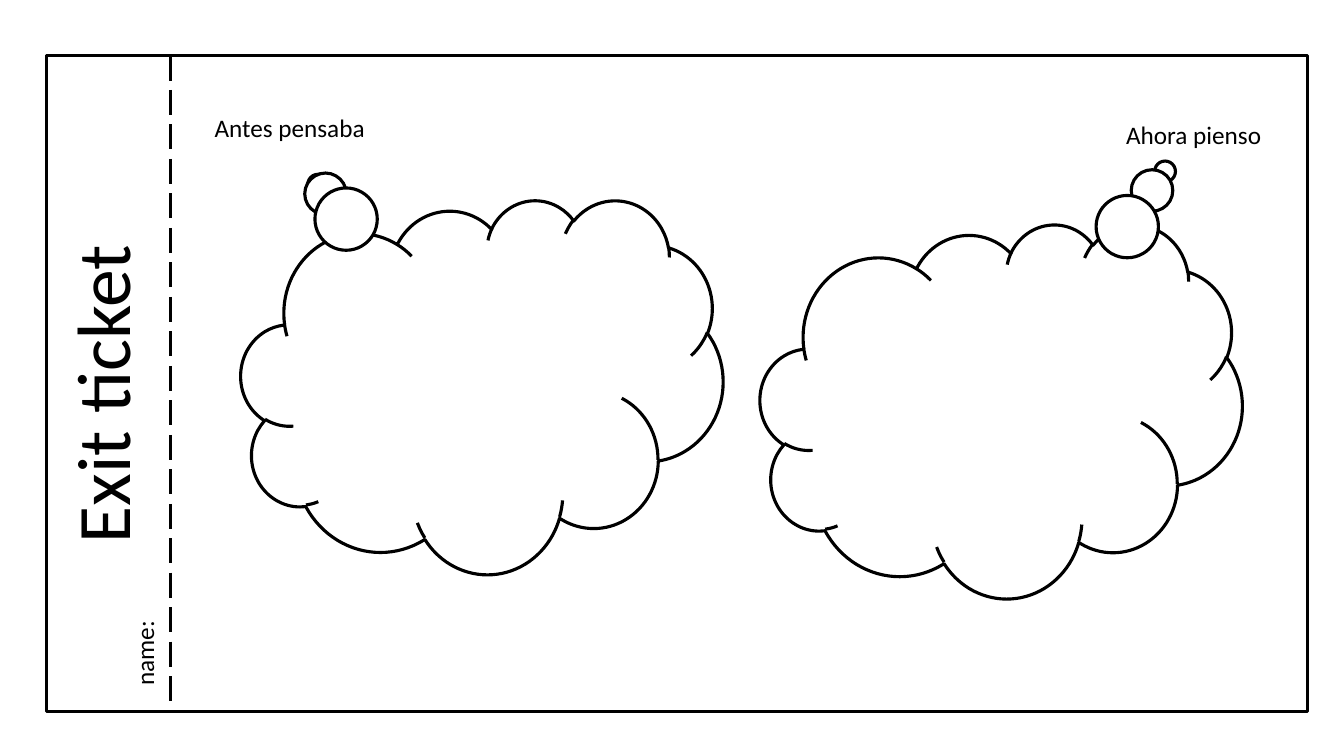
from pptx import Presentation
from pptx.dml.color import RGBColor
from pptx.enum.dml import MSO_LINE
from pptx.enum.shapes import MSO_CONNECTOR, MSO_SHAPE
from pptx.enum.text import MSO_AUTO_SIZE
from pptx.oxml.ns import qn
from pptx.util import Inches, Pt
from lxml.etree import SubElement

BLACK, WHITE = "000000", "FFFFFF"


def rgb(value):
    return RGBColor.from_string(value)


def add_label(shapes, text, box, size, rotation=0):
    sp = shapes.add_textbox(*map(Inches, box))
    sp.rotation = rotation
    tf = sp.text_frame
    tf.word_wrap = True
    tf.auto_size = MSO_AUTO_SIZE.SHAPE_TO_FIT_TEXT
    r = tf.paragraphs[0].add_run()
    r.text = text
    for name, value in {"name": "Calibri", "size": Pt(size)}.items():
        setattr(r.font, name, value)
    r.font.color.rgb = rgb(BLACK)


prs = Presentation()
prs.slide_width, prs.slide_height = Inches(13.33), Inches(7.5)
slide = prs.slides.add_slide(prs.slide_layouts[6])

ticket = slide.shapes.add_group_shape().shapes
left, top, width, height = 0.46, 0.55, 12.51, 6.51
stub = ticket.add_connector(MSO_CONNECTOR.STRAIGHT, Inches(1.69), Inches(top),
                            Inches(1.69), Inches(top + height))
stub.line.dash_style = MSO_LINE.LONG_DASH
SubElement(stub._element.spPr, qn("a:effectLst"))
frame = ticket.add_shape(MSO_SHAPE.RECTANGLE, Inches(left), Inches(top),
                         Inches(width), Inches(height))
frame.fill.background()
frame.shadow.inherit = False
outlined = [stub, frame]
add_label(ticket, "Exit ticket", (-0.68, 3.3, 3.36, 1.01), 54, 270)
add_label(ticket, "name:", (-1.4, 3.87, 5.66, 0.4), 18, 270)

thoughts = [
    ("Antes pensaba", (2.03, 1.07, 5.14, 0.4), (2.39, 1.98), (-0.34, -0.54)),
    ("Ahora pienso", (11.07, 1.13, 2.49, 0.4), (7.54, 2.22), (0.34, -0.64)),
]
for text, box, (x, y), tail in thoughts:
    cloud = slide.shapes.add_shape(MSO_SHAPE.CLOUD_CALLOUT, Inches(x), Inches(y),
                                   Inches(4.78), Inches(3.71))
    for i, value in enumerate(tail):
        cloud.adjustments[i] = value
    cloud.fill.solid()
    cloud.fill.fore_color.rgb = rgb(WHITE)
    cloud.shadow.inherit = False
    outlined.append(cloud)
    add_label(slide.shapes, text, box, 18)

for sp in outlined:
    sp.line.color.rgb = rgb(BLACK)
    sp.line.width = Pt(2.25)

prs.save("out.pptx")
